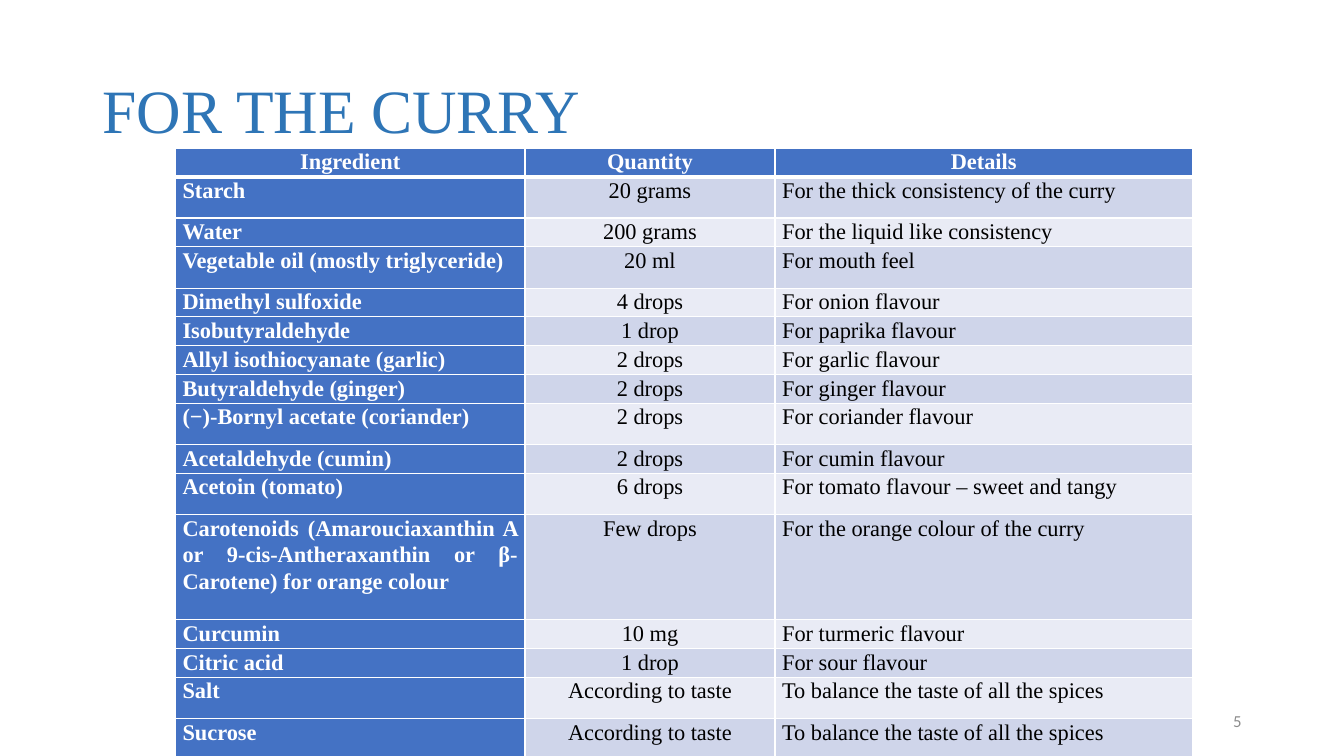
from dataclasses import dataclass

from lxml.etree import SubElement
from pptx import Presentation
from pptx.dml.color import RGBColor
from pptx.enum.text import MSO_ANCHOR as Anchor, PP_ALIGN as Align
from pptx.oxml.ns import qn
from pptx.util import Cm, Pt

COLOURS = {
    "title": "2E75B6",
    "accent": "4472C4",
    "dark_band": "CFD5EA",
    "light_band": "E9EBF5",
    "white": "FFFFFF",
    "black": "000000",
    "page": "8C8C8C",
}
SERIF = "Times New Roman"
SHORT, TALL, LONG = 0.67, 1.04, 2.65
COLUMN_WIDTHS = (8.81, 6.3, 10.52)
HEADINGS = ("Ingredient", "Quantity", "Details")


@dataclass(frozen=True)
class Ingredient:
    name: str
    quantity: str
    details: str
    height: float = SHORT


INGREDIENTS = [
    Ingredient("Starch", "20 grams", "For the thick consistency of the curry", TALL),
    Ingredient("Water", "200 grams", "For the liquid like consistency"),
    Ingredient("Vegetable oil (mostly triglyceride)", "20 ml", "For mouth feel", TALL),
    Ingredient("Dimethyl sulfoxide ", "4 drops", "For onion flavour"),
    Ingredient("Isobutyraldehyde ", "1 drop", "For paprika flavour"),
    Ingredient("Allyl isothiocyanate (garlic)", "2 drops", "For garlic flavour"),
    Ingredient("Butyraldehyde (ginger)", "2 drops", "For ginger flavour"),
    Ingredient("(−)-Bornyl acetate (coriander)", "2 drops", "For coriander flavour", TALL),
    Ingredient("Acetaldehyde (cumin)", "2 drops", "For cumin flavour"),
    Ingredient("Acetoin (tomato)", "6 drops", "For tomato flavour – sweet and tangy", TALL),
    Ingredient(
        "Carotenoids (Amarouciaxanthin A or 9-cis-Antheraxanthin or β-Carotene) for orange colour",
        "Few drops", "For the orange colour of the curry", LONG),
    Ingredient("Curcumin", "10 mg", "For turmeric flavour"),
    Ingredient("Citric acid", "1 drop", "For sour flavour"),
    Ingredient("Salt", "According to taste", "To balance the taste of all the spices", TALL),
    Ingredient("Sucrose", "According to taste", "To balance the taste of all the spices", TALL),
]


def write(frame, text: str, *, size: float, colour: str, font: str = SERIF, bold: bool = False,
          align=Align.LEFT, line_spacing: float = 1.0, space_after: float = 0) -> None:
    paragraph = frame.paragraphs[0]
    paragraph.alignment = align
    paragraph.line_spacing = line_spacing
    paragraph.space_after = Pt(space_after)
    run = paragraph.add_run()
    run.text = text
    run.font.name, run.font.size, run.font.bold = font, Pt(size), bold
    run.font.color.rgb = RGBColor.from_string(COLOURS[colour])


def add_label(slide, text: str, left: float, top: float, width: float, height: float,
              **text_format) -> None:
    frame = slide.shapes.add_textbox(Cm(left), Cm(top), Cm(width), Cm(height)).text_frame
    frame.word_wrap = True
    frame.vertical_anchor = Anchor.MIDDLE
    write(frame, text, **text_format)


def set_borders(cell, top: float, bottom: float) -> None:
    properties = cell._tc.get_or_add_tcPr()
    for side, points in (("L", 1), ("R", 1), ("T", top), ("B", bottom)):
        border = SubElement(properties, qn(f"a:ln{side}"), w=str(Pt(points)))
        fill = SubElement(border, qn("a:solidFill"))
        SubElement(fill, qn("a:srgbClr"), val=COLOURS["white"])


def fill_cell(cell, text: str, row: int, column: int) -> None:
    is_header = row == 0
    is_accent = is_header or column == 0
    band = "dark_band" if row % 2 else "light_band"
    cell.margin_left = cell.margin_right = Cm(0.18)
    cell.margin_top = cell.margin_bottom = 0
    set_borders(cell, top=3 if row == 1 else 1, bottom=3 if is_header else 1)
    cell.fill.solid()
    cell.fill.fore_color.rgb = RGBColor.from_string(COLOURS["accent" if is_accent else band])
    write(cell.text_frame, text, size=16, bold=is_accent,
          colour="white" if is_accent else "black",
          align=Align.CENTER if is_header or column == 1 else Align.JUSTIFY,
          line_spacing=1.07, space_after=8)


def add_ingredient_table(slide) -> None:
    rows = [Ingredient(*HEADINGS), *INGREDIENTS]
    table = slide.shapes.add_table(
        len(rows), len(HEADINGS), Cm(4.42), Cm(3.73),
        Cm(sum(COLUMN_WIDTHS)), Cm(sum(row.height for row in rows))).table
    for column, width in zip(table.columns, COLUMN_WIDTHS):
        column.width = Cm(width)
    for r, ingredient in enumerate(rows):
        table.rows[r].height = Cm(ingredient.height)
        for c, text in enumerate((ingredient.name, ingredient.quantity, ingredient.details)):
            fill_cell(table.cell(r, c), text, r, c)


def main() -> None:
    presentation = Presentation()
    presentation.slide_width, presentation.slide_height = Cm(33.87), Cm(19.05)
    slide = presentation.slides.add_slide(presentation.slide_layouts[6])

    # Title
    add_label(slide, "FOR THE CURRY", 2.33, 1.01, 29.21, 3.68,
              size=44, colour="title", line_spacing=0.9)
    # Ingredients
    add_ingredient_table(slide)
    # Page number
    add_label(slide, "5", 23.92, 17.66, 7.62, 1.01,
              size=12, colour="page", font="Calibri", align=Align.RIGHT)

    presentation.save("out.pptx")


if __name__ == "__main__":
    main()
